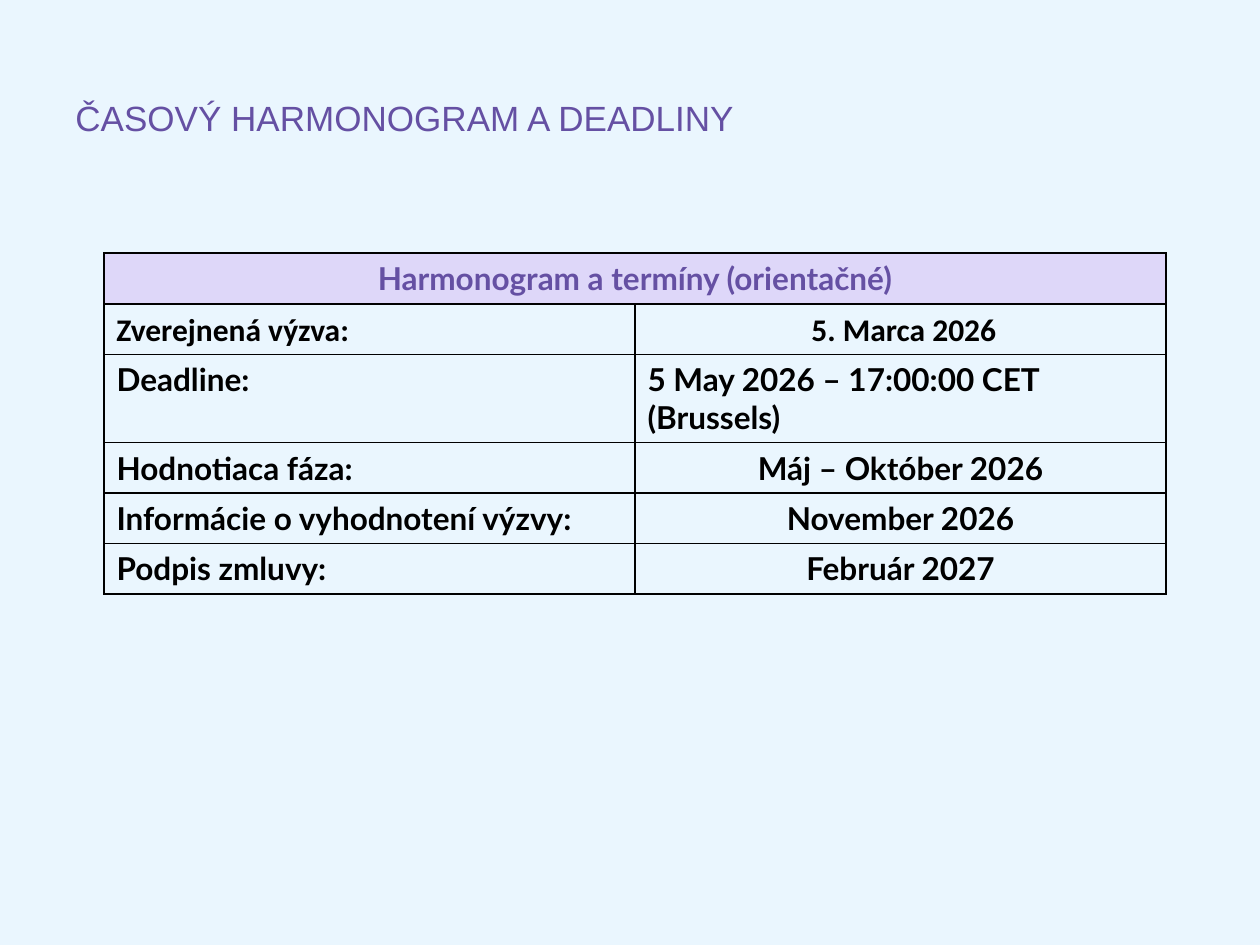
import pptx
import pptx.dml.color
import pptx.enum.text
import pptx.oxml
import pptx.oxml.ns
import pptx.util
import lxml.etree

PX = 914400 // 126
BLACK = "000000"
PURPLE = "6550A3"
LAVENDER = "DED7F9"
LEFT, HEADER_TOP, HEADER_HEIGHT = 104, 253, 51
WIDTH = 1062
ROWS_TOP = HEADER_TOP + HEADER_HEIGHT
CENTER = pptx.enum.text.PP_ALIGN.CENTER
START = pptx.enum.text.PP_ALIGN.LEFT
MIDDLE = pptx.enum.text.MSO_ANCHOR.MIDDLE
TOP = pptx.enum.text.MSO_ANCHOR.TOP

SCHEDULE = [
    ("", "", START, 50),
    ("Deadline:", "5 May 2026 – 17:00:00 CET (Brussels)", START, 88),
    ("Hodnotiaca fáza:", "Máj – Október 2026", CENTER, 50),
    ("Informácie o vyhodnotení výzvy:", "November 2026", CENTER, 50),
    ("Podpis zmluvy:", "Február 2027", CENTER, 50),
]


def px(value):
    return pptx.util.Emu(value * PX)


def color(value):
    return pptx.dml.color.RGBColor.from_string(value)


def write(frame, text, font, size, ink, bold=True, align=START):
    para = frame.paragraphs[0]
    para.alignment = align
    if not text:
        para.font.size = pptx.util.Pt(size)
        return
    span = para.add_run()
    span.text = text
    span.font.name = font
    span.font.size = pptx.util.Pt(size)
    span.font.bold = bold
    span.font.color.rgb = color(ink)


def add_label(page, bounds, text, font, size, ink, bold=True, wrap=False, anchor=TOP):
    box = page.shapes.add_textbox(*map(px, bounds))
    frame = box.text_frame
    frame.word_wrap = wrap
    frame.vertical_anchor = anchor
    if not wrap:
        frame.auto_size = pptx.enum.text.MSO_AUTO_SIZE.SHAPE_TO_FIT_TEXT
    write(frame, text, font, size, ink, bold)


def add_borders(cell):
    properties = cell._tc.get_or_add_tcPr()
    for index, side in enumerate(("lnL", "lnR", "lnT", "lnB")):
        line = lxml.etree.Element(pptx.oxml.ns.qn(f"a:{side}"), w="12700")
        fill = lxml.etree.SubElement(line, pptx.oxml.ns.qn("a:solidFill"))
        lxml.etree.SubElement(fill, pptx.oxml.ns.qn("a:srgbClr"), val=BLACK)
        properties.insert(index, line)


def add_grid(page, top, columns, heights):
    frame = page.shapes.add_table(
        len(heights), columns, px(LEFT), px(top), px(WIDTH), px(sum(heights))
    )
    table = frame.table
    table.first_row = False
    table.horz_banding = False
    for column in table.columns:
        column.width = px(WIDTH // columns)
    for row, height in zip(table.rows, heights):
        row.height = px(height)
    for cell in table.iter_cells():
        cell.fill.background()
        add_borders(cell)
    return table


def add_schedule(page):
    table = add_grid(page, ROWS_TOP, 2, [row[3] for row in SCHEDULE])
    for index, (stage, date, align, _) in enumerate(SCHEDULE):
        write(table.cell(index, 0).text_frame, stage, "Lato", 18, BLACK)
        write(table.cell(index, 1).text_frame, date, "Lato", 18, BLACK, align=align)


def add_header(page):
    cell = add_grid(page, HEADER_TOP, 1, [HEADER_HEIGHT]).cell(0, 0)
    cell.fill.solid()
    cell.fill.fore_color.rgb = color(LAVENDER)
    write(cell.text_frame, "Harmonogram a termíny (orientačné)", "Lato", 18, PURPLE,
          align=CENTER)


def main():
    deck = pptx.Presentation()
    deck.slide_width, deck.slide_height = px(1260), px(945)
    page = deck.slides.add_slide(deck.slide_layouts[6])
    page.background.fill.solid()
    page.background.fill.fore_color.rgb = color("EAF6FE")

    add_label(page, (63, 38, 1134, 158), "ČASOVÝ HARMONOGRAM A DEADLINY",
              "Arial", 20, PURPLE, bold=False, wrap=True, anchor=MIDDLE)
    add_schedule(page)
    add_header(page)
    add_label(page, (799, ROWS_TOP, 212, 50), "5. Marca 2026", "Calibri", 18, BLACK)
    add_label(page, (LEFT, ROWS_TOP, 260, 50), "Zverejnená výzva:", "Calibri", 18, BLACK)
    deck.save("out.pptx")


if __name__ == "__main__":
    main()
